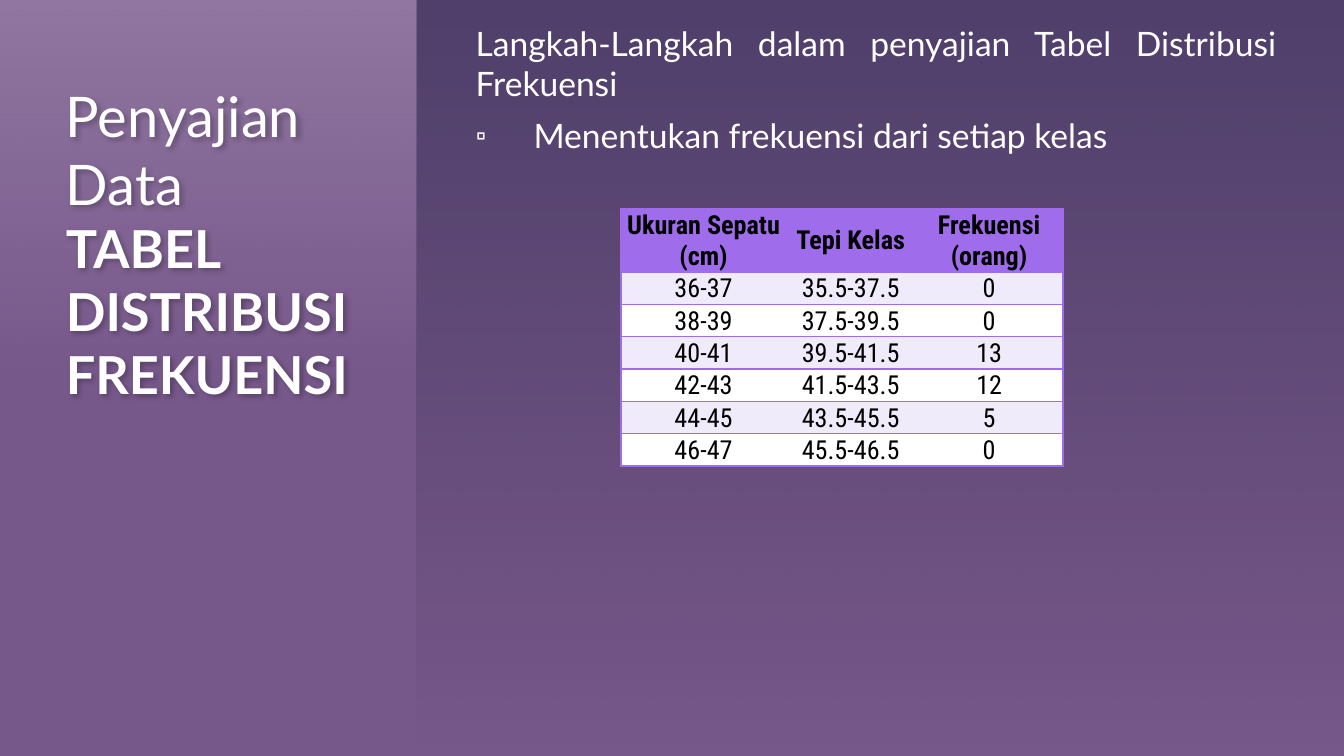
from dataclasses import dataclass

from lxml.etree import SubElement
from pptx import Presentation
from pptx.dml.color import RGBColor
from pptx.enum.shapes import MSO_SHAPE as Shape
from pptx.enum.text import MSO_ANCHOR as Anchor, PP_ALIGN as Align
from pptx.oxml.ns import qn
from pptx.util import Inches, Pt

WHITE = RGBColor(0xFF, 0xFF, 0xFF)
BLACK = RGBColor(0, 0, 0)
PLUM = RGBColor(0x77, 0x58, 0x8B)
NAVY = RGBColor(0x02, 0x0F, 0x2B)
INK = RGBColor(0x01, 0x0C, 0x16)
VIOLET = RGBColor(0x9F, 0x6D, 0xEB)
LILAC = RGBColor(0xF0, 0xEB, 0xFB)

HEADERS = ("Ukuran Sepatu (cm)", "Tepi Kelas", "Frekuensi\n(orang)")
ROWS = (
    ("36-37", "35.5-37.5", "0"),
    ("38-39", "37.5-39.5", "0"),
    ("40-41", "39.5-41.5", "13"),
    ("42-43", "41.5-43.5", "12"),
    ("44-45", "43.5-45.5", "5"),
    ("46-47", "45.5-46.5", "0"),
)
COLUMN_WIDTHS = (1.23, 0.96, 1.1)
ROW_HEIGHT = 0.21


@dataclass(frozen=True)
class Panel:
    """A rectangle that fades from the top colour to the bottom colour."""
    left: float
    top: float
    width: float
    height: float
    top_color: RGBColor
    bottom_color: RGBColor
    top_opacity: int


PANELS = (
    Panel(3.1, -0.01, 6.9, 5.64, NAVY, INK, 34),
    Panel(-0.01, -0.01, 3.11, 2.83, WHITE, WHITE, 19),
)


def draw_panel(s, panel: Panel) -> None:
    sp = s.shapes.add_shape(Shape.RECTANGLE, Inches(panel.left), Inches(panel.top),
                            Inches(panel.width), Inches(panel.height))
    sp.shadow.inherit = False
    sp.line.fill.background()
    sp.fill.gradient()
    sp.fill.gradient_angle = 270
    for stop, color in zip(sp.fill.gradient_stops, (panel.top_color, panel.bottom_color)):
        stop.color.rgb = color
    for clr, opacity in zip(sp.element.spPr.iter(qn("a:srgbClr")), (panel.top_opacity, 0)):
        SubElement(clr, qn("a:alpha"), val=str(opacity * 1000))


def add_run(p, text: str, *, size: float, font: str = "Lato",
            color: RGBColor = WHITE, bold: bool = False) -> None:
    r = p.add_run()
    r.text = text
    r.font.size = Pt(size)
    r.font.name = font
    r.font.bold = bold
    r.font.color.rgb = color


def add_box(s, left: float, top: float, width: float, height: float):
    box = s.shapes.add_textbox(Inches(left), Inches(top), Inches(width), Inches(height))
    tf = box.text_frame
    tf.word_wrap = True
    tf.margin_left = tf.margin_top = tf.margin_right = tf.margin_bottom = 0
    return box


def draw_title(s) -> None:
    box = add_box(s, 0.49, 0.61, 2.2, 4.44)
    effects = SubElement(box.element.spPr, qn("a:effectLst"))
    shadow = SubElement(effects, qn("a:outerShdw"), blurRad=str(Pt(3)),
                        dist=str(Pt(2)), dir="2700000")
    clr = SubElement(shadow, qn("a:srgbClr"), val=str(BLACK))
    SubElement(clr, qn("a:alpha"), val="25000")
    p = box.text_frame.paragraphs[0]
    add_run(p, "Penyajian Data", size=30)
    p.add_line_break()
    add_run(p, "TABEL DISTRIBUSI FREKUENSI", size=28, bold=True)


def draw_steps(s) -> None:
    tf = add_box(s, 3.47, 0.17, 6.03, 1.53).text_frame
    intro, step = tf.paragraphs[0], tf.add_paragraph()
    intro.alignment = step.alignment = Align.JUSTIFY
    intro_pr = intro._p.get_or_add_pPr()
    intro_pr.set("marL", str(Inches(0.07)))
    step.space_before = Pt(6)
    step_pr = step._p.get_or_add_pPr()
    step_pr.set("marL", str(Inches(0.5)))
    step_pr.set("indent", str(Inches(-0.43)))
    SubElement(SubElement(step_pr, qn("a:buClr")), qn("a:srgbClr"), val=str(WHITE))
    SubElement(step_pr, qn("a:buSzPct"), val="80000")
    SubElement(step_pr, qn("a:buFont"), typeface="Lato")
    SubElement(step_pr, qn("a:buChar"), char="▫")
    add_run(intro, "Langkah-Langkah dalam penyajian Tabel Distribusi Frekuensi", size=18)
    add_run(step, "Menentukan frekuensi dari setiap kelas", size=18)


def set_borders(cell, visible: set[str]) -> None:
    tc_pr = cell._tc.get_or_add_tcPr()
    for side in "LRTB":
        ln = SubElement(tc_pr, qn(f"a:ln{side}"), w=str(Pt(1)))
        if side in visible:
            SubElement(SubElement(ln, qn("a:solidFill")), qn("a:srgbClr"), val=str(VIOLET))
        else:
            SubElement(ln, qn("a:noFill"))


def fill_cell(cell, text: str, fill: RGBColor, borders: set[str], header: bool) -> None:
    set_borders(cell, borders)
    cell.fill.solid()
    cell.fill.fore_color.rgb = fill
    cell.margin_left = cell.margin_right = cell.margin_top = Pt(0.5)
    cell.margin_bottom = 0
    cell.vertical_anchor = Anchor.MIDDLE if header else Anchor.BOTTOM
    tf = cell.text_frame
    for i, line in enumerate(text.split("\n")):
        p = tf.add_paragraph() if i else tf.paragraphs[0]
        p.alignment = Align.CENTER
        add_run(p, line, size=14, font="Roboto Condensed", color=BLACK, bold=header)


def draw_table(s) -> None:
    row_count = len(ROWS) + 1
    table = s.shapes.add_table(row_count, len(HEADERS), Inches(4.62), Inches(1.55),
                               Inches(sum(COLUMN_WIDTHS)),
                               Inches(ROW_HEIGHT * row_count)).table
    table.horz_banding = False
    for column, width in zip(table.columns, COLUMN_WIDTHS):
        column.width = Inches(width)
    last = len(HEADERS) - 1
    for i, values in enumerate((HEADERS, *ROWS)):
        table.rows[i].height = Inches(ROW_HEIGHT)
        fill = VIOLET if i == 0 else LILAC if i % 2 else WHITE
        for j, value in enumerate(values):
            borders = {"T", "B"} | ({"L"} if j == 0 else {"R"} if j == last else set())
            fill_cell(table.cell(i, j), value, fill, borders, header=i == 0)


def main() -> None:
    prs = Presentation()
    prs.slide_width = Inches(10)
    prs.slide_height = prs.slide_width * 9 // 16
    s = prs.slides.add_slide(prs.slide_layouts[6])
    s.background.fill.solid()
    s.background.fill.fore_color.rgb = PLUM
    for panel in PANELS:
        draw_panel(s, panel)
    draw_title(s)
    draw_steps(s)
    draw_table(s)
    prs.save("out.pptx")


if __name__ == "__main__":
    main()
